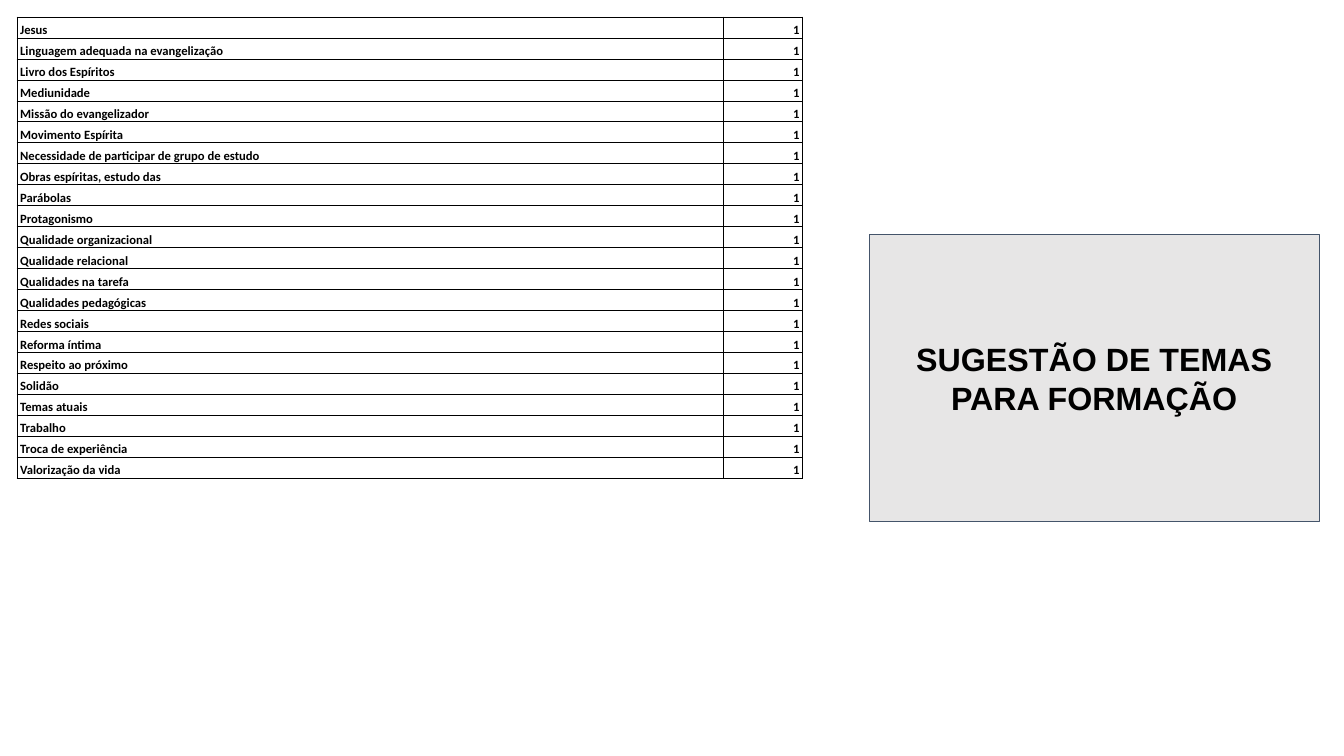
import typing

import pptx
import pptx.dml.color
import pptx.enum.text
import pptx.oxml
import pptx.oxml.ns
import pptx.oxml.xmlchemy
import pptx.util
from pptx.util import Inches

BLACK = pptx.dml.color.RGBColor(0x00, 0x00, 0x00)
PANEL_GREY = pptx.dml.color.RGBColor(0xE7, 0xE6, 0xE6)
PANEL_EDGE = pptx.dml.color.RGBColor(0x44, 0x54, 0x6A)
LINE_WIDTH = pptx.util.Pt(0.75)
ALIGN = pptx.enum.text.PP_ALIGN
ANCHOR = pptx.enum.text.MSO_ANCHOR


class Theme(typing.NamedTuple):
    name: str
    votes: int = 1


class Column(typing.NamedTuple):
    width: float
    align: pptx.enum.text.PP_ALIGN


THEMES = [
    Theme("Jesus"),
    Theme("Linguagem adequada na evangelização"),
    Theme("Livro dos Espíritos"),
    Theme("Mediunidade"),
    Theme("Missão do evangelizador"),
    Theme("Movimento Espírita"),
    Theme("Necessidade de participar de grupo de estudo"),
    Theme("Obras espíritas, estudo das"),
    Theme("Parábolas"),
    Theme("Protagonismo"),
    Theme("Qualidade organizacional"),
    Theme("Qualidade relacional"),
    Theme("Qualidades na tarefa"),
    Theme("Qualidades pedagógicas"),
    Theme("Redes sociais"),
    Theme("Reforma íntima"),
    Theme("Respeito ao próximo"),
    Theme("Solidão"),
    Theme("Temas atuais"),
    Theme("Trabalho"),
    Theme("Troca de experiência"),
    Theme("Valorização da vida"),
]
COLUMNS = [Column(7.01, ALIGN.LEFT), Column(0.78, ALIGN.RIGHT)]


def format_text(para, font_name: str, size: float, align) -> None:
    para.alignment = align
    for span in para.runs:
        span.font.name = font_name
        span.font.size = pptx.util.Pt(size)
        span.font.bold = True
        span.font.color.rgb = BLACK


def add_borders(cell) -> None:
    properties = cell._tc.get_or_add_tcPr()
    for side in ("lnL", "lnR", "lnT", "lnB"):
        properties.append(pptx.oxml.parse_xml(
            f'<a:{side} {pptx.oxml.ns.nsdecls("a")} w="{LINE_WIDTH}">'
            f'<a:solidFill><a:srgbClr val="{BLACK}"/></a:solidFill></a:{side}>'
        ))


def fill_cell(cell, text: str, align) -> None:
    cell.text_frame.text = text
    cell.vertical_anchor = ANCHOR.BOTTOM
    cell.margin_left = cell.margin_right = Inches(0.03)
    cell.margin_top = cell.margin_bottom = 0
    para = cell.text_frame.paragraphs[0]
    para.line_spacing = 1.15
    format_text(para, "Calibri", 9, align)
    add_borders(cell)
    cell.fill.background()


def add_theme_table(page) -> None:
    width = sum(column.width for column in COLUMNS)
    table = page.shapes.add_table(
        len(THEMES), len(COLUMNS),
        Inches(0.17), Inches(0.17), Inches(width), Inches(4.58),
    ).table
    table.first_row = table.horz_banding = False
    for index, column in enumerate(COLUMNS):
        table.columns[index].width = Inches(column.width)
        for row, theme in enumerate(THEMES):
            fill_cell(table.cell(row, index), str(theme[index]), column.align)


def format_title(box) -> None:
    box.left, box.top = Inches(8.62), Inches(2.33)
    box.width, box.height = Inches(4.47), Inches(2.84)

    # Rounded outline of the title panel
    box._element.spPr.append(pptx.oxml.parse_xml(
        f'<a:prstGeom {pptx.oxml.ns.nsdecls("a")} prst="roundRect">'
        '<a:avLst><a:gd name="adj" fmla="val 16667"/></a:avLst></a:prstGeom>'
    ))
    box.fill.solid()
    box.fill.fore_color.rgb = PANEL_GREY
    box.line.color.rgb = PANEL_EDGE
    box.line.width = LINE_WIDTH

    frame = box.text_frame
    frame.text = "SUGESTÃO DE TEMAS PARA FORMAÇÃO"
    frame.word_wrap = True
    frame.auto_size = pptx.enum.text.MSO_AUTO_SIZE.NONE
    frame.vertical_anchor = ANCHOR.MIDDLE
    frame.margin_left = frame.margin_right = Inches(0.1)
    frame.margin_top = frame.margin_bottom = Inches(0.1)
    format_text(frame.paragraphs[0], "Arial", 23, ALIGN.CENTER)


def main() -> None:
    deck = pptx.Presentation()
    deck.slide_width, deck.slide_height = Inches(13.33), Inches(7.5)
    page = deck.slides.add_slide(deck.slide_layouts.get_by_name("Title Only"))

    # Suggested themes with their number of votes
    add_theme_table(page)

    # Title panel on the right
    format_title(page.shapes.title)

    deck.save("out.pptx")


if __name__ == "__main__":
    main()
